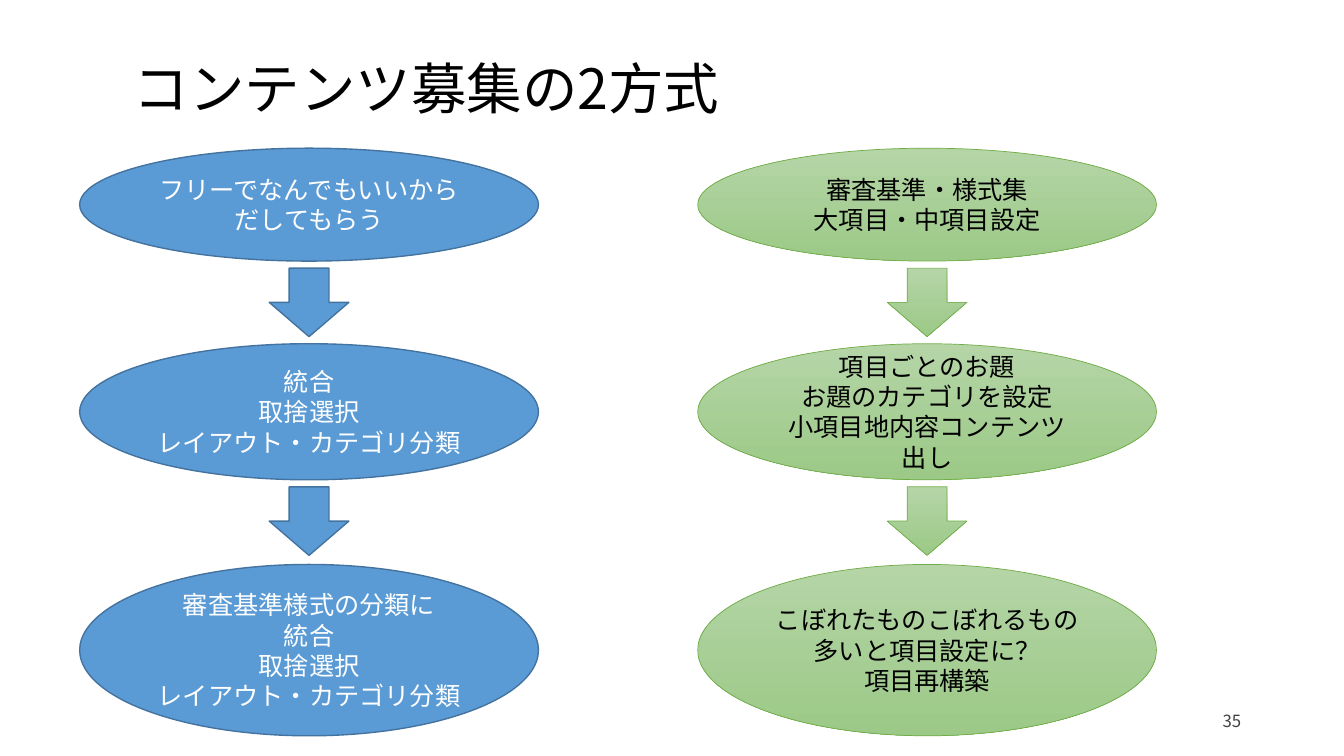
"""Build a slide comparing two ways of collecting content as parallel flows."""
import dataclasses

import lxml.etree
import pptx
import pptx.dml.color
import pptx.enum.shapes
import pptx.enum.text
import pptx.oxml.ns
import pptx.util

Shape = pptx.enum.shapes.MSO_SHAPE
Align = pptx.enum.text.PP_ALIGN
Anchor = pptx.enum.text.MSO_ANCHOR


@dataclasses.dataclass(frozen=True)
class Flow:
    fills: tuple
    line: str
    line_width: float
    ink: str


@dataclasses.dataclass(frozen=True)
class Theme:
    heading_font: str = "Noto Sans CJK JP"
    body_font: str = "TeX Gyre Adventor"
    title_size: float = 39.6
    body_size: float = 18
    number_size: float = 12
    title_ink: str = "000000"
    number_ink: str = "404040"
    free: Flow = Flow(("5B9BD5",), "43739E", 1, "FFFFFF")
    guided: Flow = Flow(("B5D5A7", "9CC987"), "70AD47", 0.5, "000000")


def rgb(value):
    return pptx.dml.color.RGBColor.from_string(value)


class Painter:
    SCALE = 9144

    def __init__(self, page, theme):
        self.page = page
        self.theme = theme

    def place(self, *lengths):
        return [pptx.util.Emu(length * self.SCALE) for length in lengths]

    def fill_text(self, shape, lines, font, size, ink, align):
        frame = shape.text_frame
        formats = {"word_wrap": True, "vertical_anchor": Anchor.MIDDLE}
        for name, value in formats.items():
            setattr(frame, name, value)
        for index, line in enumerate(lines):
            para = frame.add_paragraph() if index else frame.paragraphs[0]
            para.alignment = align
            span = para.add_run()
            span.text = line
            for name, value in {"name": font, "size": pptx.util.Pt(size)}.items():
                setattr(span.font, name, value)
            span.font.color.rgb = rgb(ink)
            properties = span._r.get_or_add_rPr()
            east_asian = lxml.etree.SubElement(properties, pptx.oxml.ns.qn("a:ea"))
            east_asian.set("typeface", font)

    def label(self, box, text, size, ink, align):
        shape = self.page.shapes.add_textbox(*self.place(*box))
        self.fill_text(shape, [text], self.theme.heading_font, size, ink, align)

    def block(self, kind, box, flow):
        shape = self.page.shapes.add_shape(kind, *self.place(*box))
        shape.shadow.inherit = False
        if len(flow.fills) == 1:
            shape.fill.solid()
            shape.fill.fore_color.rgb = rgb(flow.fills[0])
        else:
            shape.fill.gradient()
            shape.fill.gradient_angle = 270
            for stop, color in zip(shape.fill.gradient_stops, flow.fills):
                stop.color.rgb = rgb(color)
        shape.line.color.rgb = rgb(flow.line)
        shape.line.width = pptx.util.Pt(flow.line_width)
        return shape

    def step(self, box, lines, flow):
        shape = self.block(Shape.OVAL, box, flow)
        self.fill_text(shape, lines, self.theme.body_font, self.theme.body_size,
                       flow.ink, Align.CENTER)

    def arrow(self, box, flow):
        self.block(Shape.DOWN_ARROW, box, flow)


STEP_WIDTH = 455
STEP_ROWS = [(147, 112), (341, 135), (560, 170)]
ARROW_WIDTH, ARROW_HEIGHT = 79, 68
ARROW_TOPS = [266, 483]


def main():
    theme = Theme()
    deck = pptx.Presentation()
    deck.slide_width = pptx.util.Inches(13.33)
    deck.slide_height = pptx.util.Inches(7.5)
    page = deck.slides.add_slide(deck.slide_layouts[6])
    painter = Painter(page, theme)

    painter.label((123, 47, 1150, 80), "コンテンツ募集の2方式",
                  theme.title_size, theme.title_ink, Align.LEFT)
    painter.label((883, 695, 358, 40), "35",
                  theme.number_size, theme.number_ink, Align.RIGHT)

    columns = [
        (79, theme.free, [
            ["フリーでなんでもいいから", "だしてもらう"],
            ["統合", "取捨選択", "レイアウト・カテゴリ分類"],
            ["審査基準様式の分類に", "統合", "取捨選択", "レイアウト・カテゴリ分類"],
        ]),
        (692, theme.guided, [
            ["審査基準・様式集", "大項目・中項目設定"],
            ["項目ごとのお題", "お題のカテゴリを設定", "小項目地内容コンテンツ", "出し"],
            ["こぼれたものこぼれるもの", "多いと項目設定に？", "項目再構築"],
        ]),
    ]
    for left, flow, steps in columns:
        for (top, height), lines in zip(STEP_ROWS, steps):
            painter.step((left, top, STEP_WIDTH, height), lines, flow)
        arrow_left = left + (STEP_WIDTH - ARROW_WIDTH) // 2
        for top in ARROW_TOPS:
            painter.arrow((arrow_left, top, ARROW_WIDTH, ARROW_HEIGHT), flow)

    deck.save("out.pptx")


if __name__ == "__main__":
    main()
